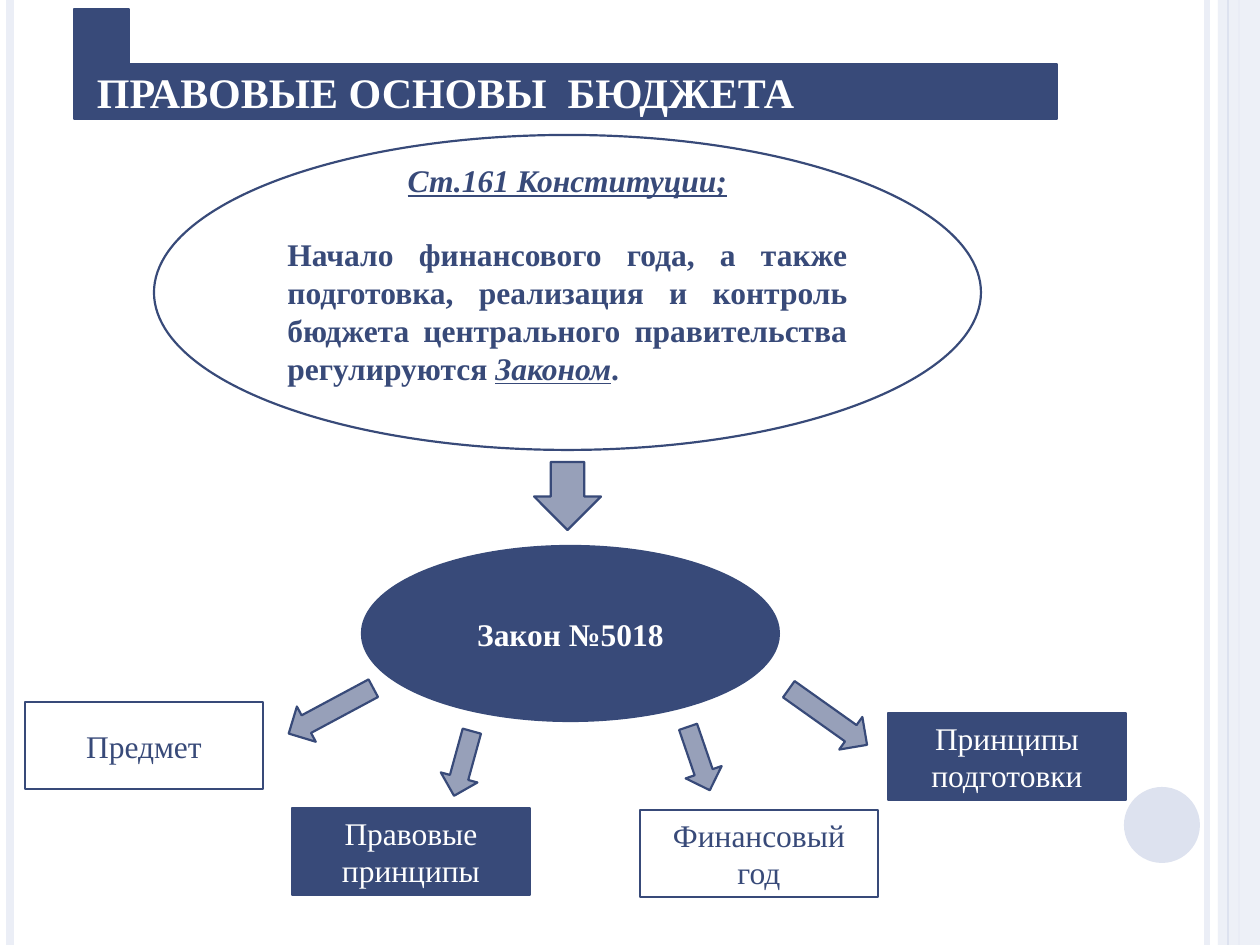
from lxml import etree
from pptx import Presentation
from pptx.dml.color import RGBColor
from pptx.enum.shapes import MSO_CONNECTOR, MSO_SHAPE
from pptx.enum.text import MSO_ANCHOR, PP_ALIGN
from pptx.oxml.ns import qn
from pptx.util import Emu, Pt

RECT, OVAL = MSO_SHAPE.RECTANGLE, MSO_SHAPE.OVAL
CORNER, DOWN_ARROW = MSO_SHAPE.CORNER, MSO_SHAPE.DOWN_ARROW
STRAIGHT = MSO_CONNECTOR.STRAIGHT
MIDDLE = MSO_ANCHOR.MIDDLE
LEFT, CENTER, JUSTIFY = PP_ALIGN.LEFT, PP_ALIGN.CENTER, PP_ALIGN.JUSTIFY

NAVY, WHITE, PALE, MIST = "384A79", "FFFFFF", "EBEEF6", "DDE2EF"
FONT = "Times New Roman"
WIDTH, HEIGHT = 1260, 945


def px(length):
    return Emu(round(length * 914400 / 126))


def rgb(value):
    return RGBColor.from_string(value)


def add_stripe(slide, x, color, weight):
    """Draw a vertical line over the full slide height."""
    stripe = slide.shapes.add_connector(STRAIGHT, px(x), 0, px(x), px(HEIGHT))
    stripe.line.color.rgb = rgb(color)
    stripe.line.width = Pt(weight)
    etree.SubElement(stripe.element.spPr, qn("a:effectLst"))


def add_figure(slide, kind, box, fill, outline=NAVY, opacity=100):
    figure = slide.shapes.add_shape(kind, *map(px, box))
    figure.shadow.inherit = False
    figure.fill.solid()
    figure.fill.fore_color.rgb = rgb(fill)
    if opacity < 100:
        color = figure.element.spPr.find(qn("a:solidFill")).find(qn("a:srgbClr"))
        etree.SubElement(color, qn("a:alpha"), val=str(opacity * 1000))
    if outline:
        figure.line.color.rgb = rgb(outline)
        figure.line.width = Pt(1.25)
    else:
        figure.line.fill.background()
    return figure


def style_paragraph(paragraph, color, size=18, bold=False, align=CENTER):
    paragraph.alignment = align
    font = paragraph.font
    font.name, font.size, font.bold = FONT, Pt(size), bold
    font.color.rgb = rgb(color)


def add_label(figure, text, color, **style):
    frame = figure.text_frame
    frame.word_wrap = True
    frame.vertical_anchor = MIDDLE
    paragraph = frame.paragraphs[0]
    paragraph.text = text
    style_paragraph(paragraph, color, **style)


def add_emphasis(paragraph, text):
    run = paragraph.add_run()
    run.text = text
    run.font.italic = run.font.underline = True


def add_background(slide):
    add_stripe(slide, 1207, PALE, 3)
    add_stripe(slide, 10, PALE, 4.5)
    add_stripe(slide, 1239, MIST, 1.5)
    add_figure(slide, RECT, (1218, 0, 42, HEIGHT), PALE, None, 87)
    add_stripe(slide, 1228, MIST, 0.75)
    add_figure(slide, OVAL, (1124, 787, 76, 76), MIST, None)


def add_title(slide):
    title = add_figure(slide, CORNER, (74, 9, 983, 110), NAVY)
    add_label(title, "ПРАВОВЫЕ ОСНОВЫ  БЮДЖЕТА", WHITE, size=24, bold=True, align=LEFT)
    title.text_frame.margin_left = px(23)


def add_constitution(slide):
    constitution = add_figure(slide, OVAL, (154, 135, 827, 315), WHITE)
    frame = constitution.text_frame
    frame.word_wrap = True
    frame.vertical_anchor = MIDDLE
    frame.margin_bottom = px(44)

    article = frame.paragraphs[0]
    style_paragraph(article, NAVY, bold=True)
    add_emphasis(article, "Ст.161 Конституции;")

    provision = frame.add_paragraph()
    style_paragraph(provision, NAVY, bold=True, align=JUSTIFY)
    provision.space_before = Pt(21)
    provision.add_run().text = (
        "Начало финансового года, а также подготовка, реализация и контроль "
        "бюджета центрального правительства регулируются "
    )
    add_emphasis(provision, "Законом")
    provision.add_run().text = "."


def add_topics(slide):
    topics = [
        ("Предмет", 25, 702, WHITE, NAVY),
        ("Правовые принципы", 292, 808, NAVY, WHITE),
        ("Финансовый год", 640, 810, WHITE, NAVY),
        ("Принципы подготовки", 888, 713, NAVY, WHITE),
    ]
    for text, x, y, fill, color in topics:
        topic = add_figure(slide, RECT, (x, y, 238, 87), fill)
        add_label(topic, text, color)


def add_law(slide):
    law = add_figure(slide, OVAL, (362, 546, 417, 175), NAVY)
    add_label(law, "Закон №5018", WHITE, bold=True)


def add_arrows(slide):
    arrows = [
        ((534, 462, 67, 68), 0),
        ((311, 663, 40, 96), 61.8),
        ((444, 730, 38, 67), 15.4),
        ((680, 725, 38, 67), 341.1),
        ((808, 669, 40, 96), 305.4),
    ]
    for box, rotation in arrows:
        arrow = add_figure(slide, DOWN_ARROW, box, NAVY, opacity=52)
        arrow.rotation = rotation


def main():
    presentation = Presentation()
    presentation.slide_width, presentation.slide_height = px(WIDTH), px(HEIGHT)
    slide = presentation.slides.add_slide(presentation.slide_layouts[6])
    add_background(slide)
    add_title(slide)
    add_constitution(slide)
    add_topics(slide)
    add_law(slide)
    add_arrows(slide)
    presentation.save("out.pptx")


if __name__ == "__main__":
    main()
